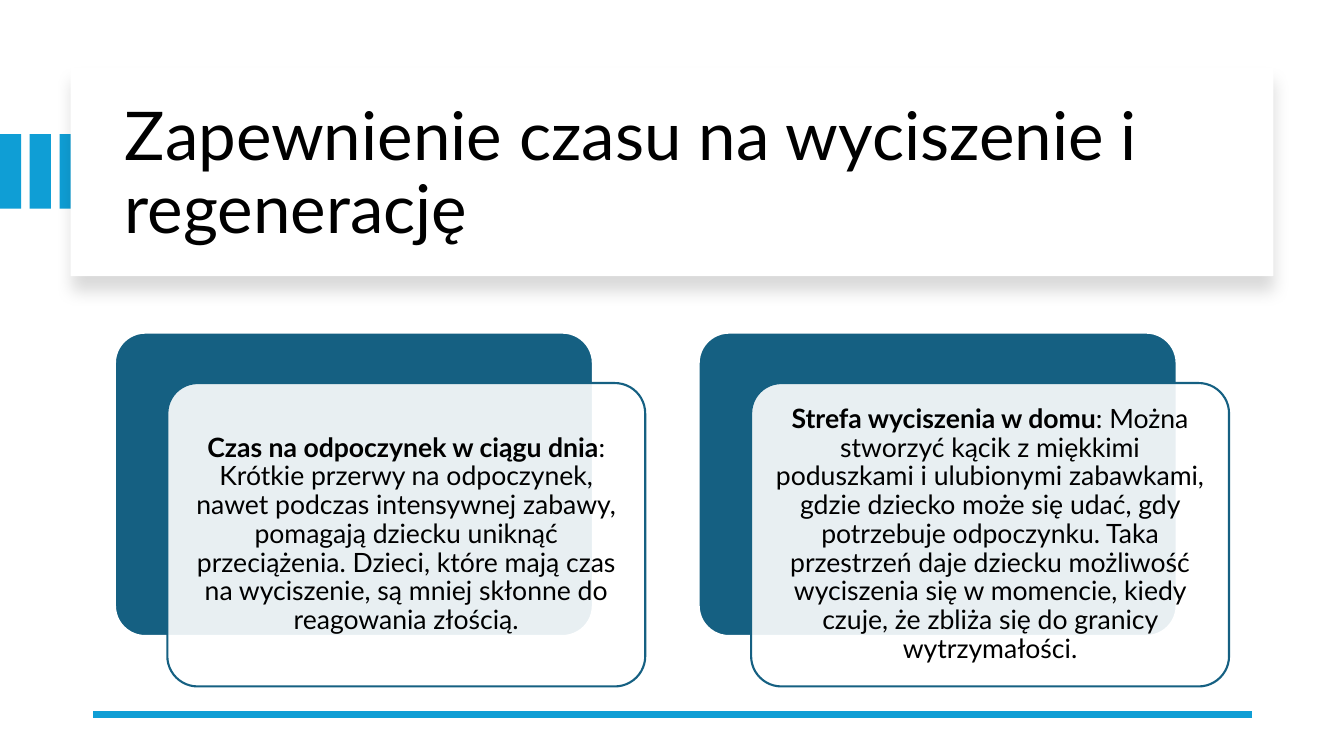
from lxml.etree import SubElement
from pptx import Presentation
from pptx.dml.color import RGBColor
from pptx.enum.shapes import MSO_CONNECTOR, MSO_SHAPE
from pptx.enum.text import MSO_ANCHOR, PP_ALIGN
from pptx.oxml.ns import qn
from pptx.util import Inches, Pt

TITLE = "Zapewnienie czasu na wyciszenie i regenerację"
CARDS = [
    ("Czas na odpoczynek w ciągu dnia",
     ": Krótkie przerwy na odpoczynek, nawet podczas intensywnej zabawy, "
     "pomagają dziecku uniknąć przeciążenia. Dzieci, które mają czas na "
     "wyciszenie, są mniej skłonne do reagowania złością."),
    ("Strefa wyciszenia w domu",
     ": Można stworzyć kącik z miękkimi poduszkami i ulubionymi zabawkami, "
     "gdzie dziecko może się udać, gdy potrzebuje odpoczynku. Taka przestrzeń "
     "daje dziecku możliwość wyciszenia się w momencie, kiedy czuje, że zbliża "
     "się do granicy wytrzymałości."),
]
THEME = {
    "font": "Lato",
    "title_size": Pt(48),
    "card_size": Pt(19),
    "text": RGBColor.from_string("000000"),
    "paper": RGBColor.from_string("FFFFFF"),
    "accent": RGBColor.from_string("0F9ED5"),
    "card": RGBColor.from_string("156082"),
}

STRIPE_COUNT, STRIPE_STEP = 3, 0.295
CARD_LEFT, CARD_TOP, CARD_STEP = 1.14, 3.3, 5.79
CARD_WIDTH, CARD_HEIGHT = 4.74, 3.01
FRONT_SHIFT_X, FRONT_SHIFT_Y = 0.52, 0.5
CARD_INSET = 0.08


def add_box(slide, kind, bounds, fill, line=None):
    shape = slide.shapes.add_shape(kind, *map(Inches, bounds))
    shape.shadow.inherit = False
    shape.fill.solid()
    shape.fill.fore_color.rgb = fill
    if line is None:
        shape.line.fill.background()
    else:
        shape.line.color.rgb = line
        shape.line.width = Pt(1.5)
    if kind == MSO_SHAPE.ROUNDED_RECTANGLE:
        shape.adjustments[0] = 0.1
    return shape


def set_alpha(color_element, percent):
    SubElement(color_element, qn("a:alpha"), val=str(percent * 1000))


def add_soft_shadow(shape):
    effects = shape._element.spPr.find(qn("a:effectLst"))
    shadow = SubElement(effects, qn("a:outerShdw"), blurRad=str(Pt(11)),
                        dist=str(Pt(10)), dir="5400000", algn="t", rotWithShape="0")
    set_alpha(SubElement(shadow, qn("a:srgbClr"), val=str(THEME["text"])), 15)


def style_paragraph(paragraph, size, alignment):
    paragraph.alignment = alignment
    paragraph.line_spacing = 0.9
    paragraph.font.name = THEME["font"]
    paragraph.font.size = size
    paragraph.font.color.rgb = THEME["text"]


def add_title(slide):
    for index in range(STRIPE_COUNT):
        add_box(slide, MSO_SHAPE.RECTANGLE,
                (index * STRIPE_STEP, 1.33, 0.21, 0.74), THEME["accent"])
    panel = add_box(slide, MSO_SHAPE.RECTANGLE, (0.7, 0.67, 11.93, 2.07), THEME["paper"])
    add_soft_shadow(panel)
    title = slide.shapes.add_textbox(*map(Inches, (1.14, 0.89, 11.13, 1.7)))
    frame = title.text_frame
    frame.word_wrap = True
    frame.vertical_anchor = MSO_ANCHOR.MIDDLE
    frame.text = TITLE
    style_paragraph(frame.paragraphs[0], THEME["title_size"], PP_ALIGN.LEFT)


def add_bottom_rule(slide):
    rule = slide.shapes.add_connector(
        MSO_CONNECTOR.STRAIGHT, *map(Inches, (12.42, 7.09, 0.92, 7.09)))
    rule.line.color.rgb = THEME["accent"]
    rule.line.width = Pt(4.5)
    SubElement(rule._element.spPr, qn("a:effectLst"))


def add_card(slide, left, heading, body):
    add_box(slide, MSO_SHAPE.ROUNDED_RECTANGLE,
            (left, CARD_TOP, CARD_WIDTH, CARD_HEIGHT), THEME["card"], THEME["paper"])
    front = add_box(slide, MSO_SHAPE.ROUNDED_RECTANGLE,
                    (left + FRONT_SHIFT_X, CARD_TOP + FRONT_SHIFT_Y, CARD_WIDTH, CARD_HEIGHT),
                    THEME["paper"], THEME["card"])
    set_alpha(front._element.spPr.find(qn("a:solidFill"))[0], 90)
    frame = front.text_frame
    frame.word_wrap = True
    frame.vertical_anchor = MSO_ANCHOR.MIDDLE
    frame.margin_left = frame.margin_right = Inches(CARD_INSET)
    frame.margin_top = frame.margin_bottom = Inches(CARD_INSET)
    paragraph = frame.paragraphs[0]
    style_paragraph(paragraph, THEME["card_size"], PP_ALIGN.CENTER)
    for text, bold in ((heading, True), (body, False)):
        run = paragraph.add_run()
        run.text = text
        run.font.bold = bold
        run.font.color.rgb = THEME["text"]


def main():
    presentation = Presentation()
    presentation.slide_width, presentation.slide_height = Inches(13.33), Inches(7.5)
    slide = presentation.slides.add_slide(presentation.slide_layouts[6])
    add_title(slide)
    add_bottom_rule(slide)
    for index, (heading, body) in enumerate(CARDS):
        add_card(slide, CARD_LEFT + index * CARD_STEP, heading, body)
    presentation.save("out.pptx")


if __name__ == "__main__":
    main()
